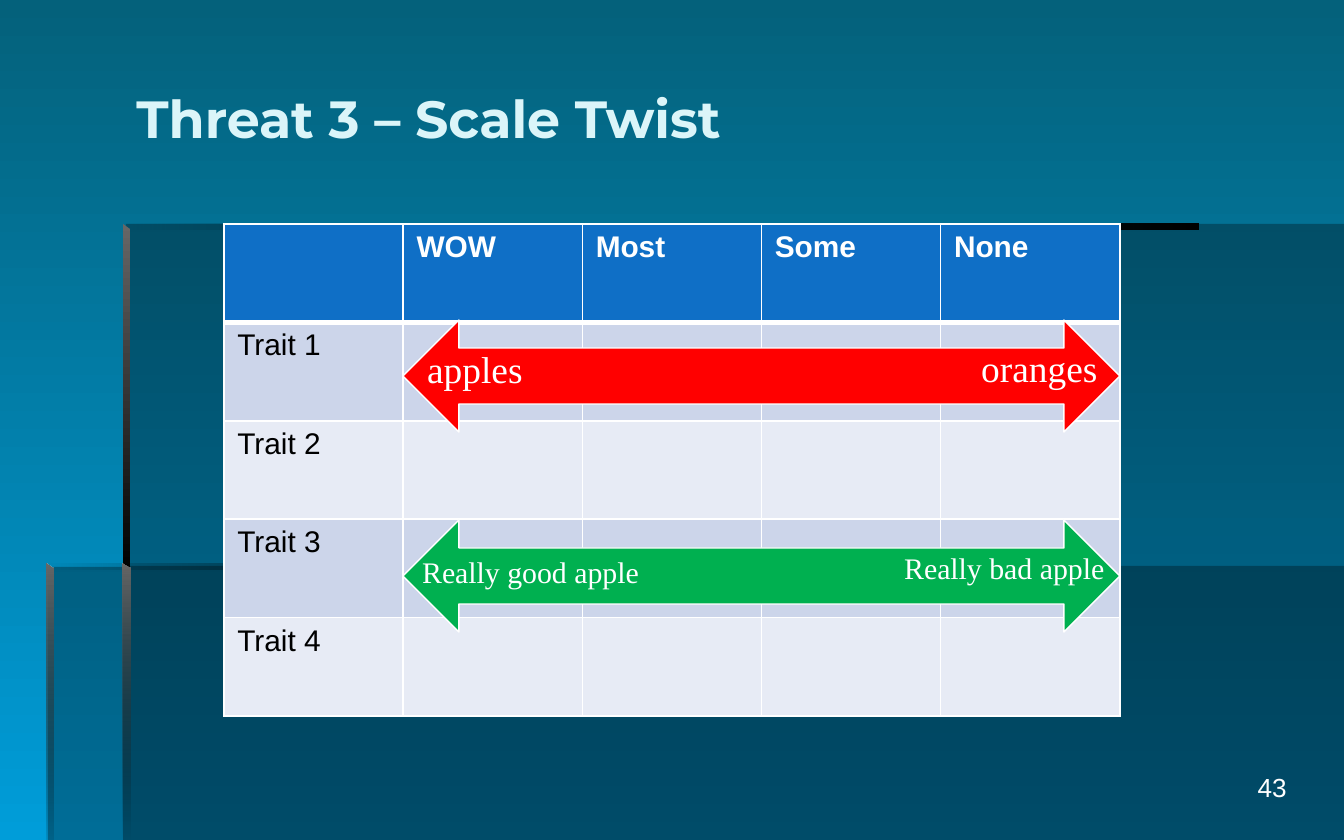
from lxml import etree
from pptx import Presentation
from pptx.dml.color import RGBColor
from pptx.enum.shapes import MSO_SHAPE
from pptx.enum.text import MSO_ANCHOR, MSO_AUTO_SIZE, PP_ALIGN
from pptx.oxml.ns import qn
from pptx.util import Pt

LEFT, RIGHT = PP_ALIGN.LEFT, PP_ALIGN.RIGHT
MIDDLE = MSO_ANCHOR.MIDDLE
GROW, FIXED = MSO_AUTO_SIZE.SHAPE_TO_FIT_TEXT, MSO_AUTO_SIZE.NONE
ARROW = MSO_SHAPE.LEFT_RIGHT_ARROW

BLACK = RGBColor(0x00, 0x00, 0x00)
WHITE = RGBColor(0xFF, 0xFF, 0xFF)
GRAY = RGBColor(0x66, 0x66, 0x66)
TEAL = RGBColor(0x04, 0x61, 0x7B)
SKY = RGBColor(0x00, 0x9D, 0xD9)
PALE = RGBColor(0xDB, 0xF5, 0xF9)
BLUE = RGBColor(0x0F, 0x6F, 0xC6)
BAND = RGBColor(0xCC, 0xD5, 0xEA)
LIGHT = RGBColor(0xE7, 0xEB, 0xF5)
RED = RGBColor(0xFF, 0x00, 0x00)
GREEN = RGBColor(0x00, 0xB0, 0x50)

WIDE, HIGH = 1344, 840
PX = 9144000 / WIDE
SANS, SERIF, HEAD = "Arial", "Times New Roman", "Montserrat"
DOWN = 270  # gradient angles run counter-clockwise


def emu(*sizes):
    return [round(size * PX) for size in sizes]


def fade(color, alpha):
    """Give the colour element an opacity in percent."""
    if alpha < 100:
        etree.SubElement(color, qn("a:alpha"), val=str(alpha * 1000))


def blend(fill, angle, stops):
    """Fill with a two-stop gradient of (colour, opacity) pairs."""
    fill.gradient()
    fill.gradient_angle = angle
    for stop, (color, _) in zip(fill.gradient_stops, stops):
        stop.color.rgb = color
    return [alpha for _, alpha in stops]


def edge(cell, side, width):
    line = etree.SubElement(cell._tc.get_or_add_tcPr(), qn("a:ln" + side),
                            w=str(Pt(width)))
    solid = etree.SubElement(line, qn("a:solidFill"))
    etree.SubElement(solid, qn("a:srgbClr"), val=str(WHITE))


class Deck:
    """Holds the slide and the shared text style."""

    def __init__(self):
        self.file = Presentation()
        self.file.slide_width, self.file.slide_height = emu(WIDE, HIGH)
        self.slide = self.file.slides.add_slide(self.file.slide_layouts[5])
        self.shapes = self.slide.shapes
        blend(self.slide.background.fill, DOWN, [(TEAL, 100), (SKY, 100)])

    def style(self, frame, size, font, color=WHITE, bold=False, align=LEFT):
        for para in frame.paragraphs:
            para.alignment = align
            for run in para.runs:
                run.font.size, run.font.name = Pt(size), font
                run.font.color.rgb, run.font.bold = color, bold

    def title(self, text, *box):
        shape = self.shapes.title
        shape.left, shape.top, shape.width, shape.height = emu(*box)
        frame = shape.text_frame
        frame.text = text
        frame.vertical_anchor, frame.auto_size = MIDDLE, FIXED
        self.style(frame, 28, HEAD, PALE, True)

    def outline(self, points):
        draw = self.shapes.build_freeform(*points[0], scale=PX)
        draw.add_line_segments(points[1:], close=True)
        shape = draw.convert_to_shape()
        shape.shadow.inherit = False
        shape.line.fill.background()
        return shape

    def panel(self, points):
        shape = self.outline(points)
        shape.fill.solid()
        shape.fill.fore_color.rgb = BLACK
        for color in shape._element.spPr.iter(qn("a:srgbClr")):
            fade(color, 30)

    def bar(self, points, angle, stops):
        shape = self.outline(points)
        alphas = blend(shape.fill, angle, stops)
        colors = list(shape._element.spPr.iter(qn("a:srgbClr")))
        for color, alpha in zip(colors, alphas):
            fade(color, alpha)

    def table(self, rows, *box):
        grid = self.shapes.add_table(len(rows), len(rows[0]), *emu(*box)).table
        for r, row in enumerate(rows):
            head = r == 0
            for c, text in enumerate(row):
                cell = grid.cell(r, c)
                for side in "LRTB":
                    thick = (r, side) in ((0, "B"), (1, "T"))
                    edge(cell, side, 3 if thick else 1)
                cell.fill.solid()
                cell.fill.fore_color.rgb = BLUE if head else (LIGHT, BAND)[r % 2]
                cell.text_frame.text = text
                self.style(cell.text_frame, 16, SANS,
                           WHITE if head else BLACK, head)

    def arrow(self, color, *box):
        shape = self.shapes.add_shape(ARROW, *emu(*box))
        shape.shadow.inherit = False
        shape.fill.solid()
        shape.fill.fore_color.rgb = color
        shape.line.color.rgb, shape.line.width = WHITE, Pt(0.75)

    def label(self, text, box, size, font=SERIF, align=LEFT, fit=GROW):
        frame = self.shapes.add_textbox(*emu(*box)).text_frame
        frame.word_wrap, frame.auto_size = True, fit
        frame.text = text
        self.style(frame, size, font, align=align)


def main():
    deck = Deck()
    deck.panel([(123, 566), (123, HIGH), (WIDE, HIGH), (WIDE, 566)])
    deck.panel([(126, 567), (48, 567), (48, HIGH), (WIDE, HIGH),
                (WIDE, 224), (126, 224)])

    for left, right, top, low in ((123, 1198, 224, 230), (47, 719, 564, 570)):
        deck.bar([(left, top), (left, low), (right, low), (right, top)],
                 0, [(BLACK, 0), (BLACK, 100)])
    for left, right, top, low, alpha in ((123, 130, 224, 571, 100),
                                         (122, 130, 564, HIGH, 0),
                                         (47, 54, 564, HIGH, 10)):
        deck.bar([(left, top), (left, low), (right, low), (right, top + 5)],
                 DOWN, [(GRAY, 100), (BLACK, alpha)])

    deck.title("Threat 3 – Scale Twist", 123, 30, 1176, 175)
    rows = [["", "WOW", "Most", "Some", "None"]]
    rows += [[f"Trait {n}", "", "", "", ""] for n in range(1, 5)]
    deck.table(rows, 224, 224, 896, 492)
    deck.label("43", (1020, 765, 280, 58), 14, SANS, RIGHT, FIXED)

    deck.arrow(RED, 403, 320, 717, 112)
    deck.label("apples", (414, 340, 145, 59), 20)
    deck.label("oranges", (968, 339, 152, 59), 20)
    deck.arrow(GREEN, 403, 520, 717, 112)
    deck.label("Really good apple", (409, 547, 258, 50), 16)
    deck.label("Really bad apple", (891, 543, 230, 50), 16)
    deck.file.save("out.pptx")


if __name__ == "__main__":
    main()
